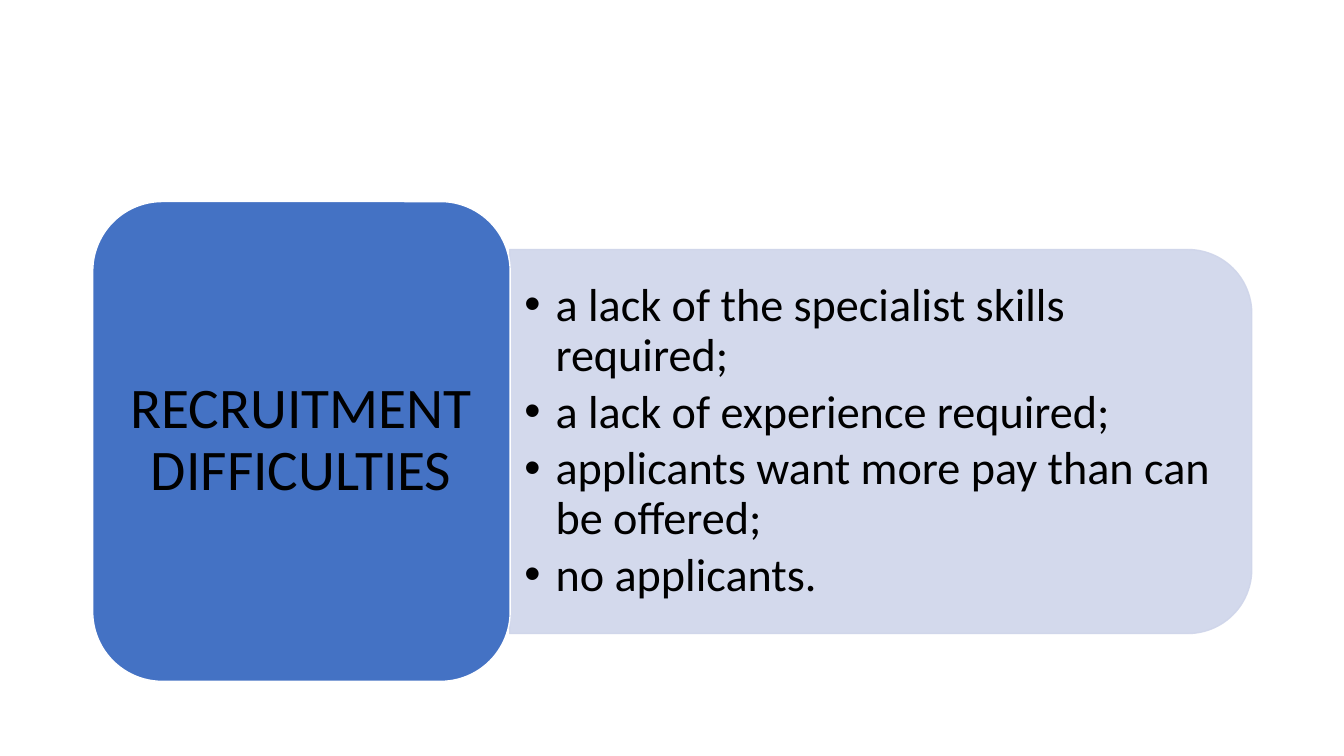
from dataclasses import dataclass
from typing import Any

from lxml import etree
from pptx import Presentation
from pptx.dml.color import RGBColor
from pptx.enum.shapes import MSO_SHAPE
from pptx.enum.text import MSO_ANCHOR, MSO_AUTO_SIZE, PP_ALIGN
from pptx.oxml.ns import qn
from pptx.util import Inches, Pt

ROUNDED = MSO_SHAPE.ROUNDED_RECTANGLE
ROUNDED_TOP = MSO_SHAPE.ROUND_2_SAME_RECTANGLE
MIDDLE = MSO_ANCHOR.MIDDLE
NO_AUTOFIT = MSO_AUTO_SIZE.NONE
LEFT, CENTER = PP_ALIGN.LEFT, PP_ALIGN.CENTER

COLORS = {"panel": "CFD5EA", "label": "4472C4", "edge": "FFFFFF", "text": "000000"}
BULLET_INDENT = Inches(0.31)


@dataclass
class Panel:
    preset: Any
    bounds: tuple[float, float, float, float]
    fill: str
    line: str
    rotation: int = 0
    opacity: int = 100


@dataclass
class TextBlock:
    bounds: tuple[float, float, float, float]
    margins: tuple[float, float]
    lines: list[str]
    size: int
    align: Any
    space_after: int = 0
    bullet: str = ""


DETAIL_PANEL = Panel(ROUNDED_TOP, (6.83, 0.7, 3.81, 7.36), "panel", "panel", 90, 90)
LABEL_PANEL = Panel(ROUNDED, (0.92, 2, 4.14, 4.76), "label", "edge")
LABEL = TextBlock((1.12, 2.2, 3.74, 4.35), (0.17, 0.09),
                  ["RECRUITMENT DIFFICULTIES"], 41, CENTER)
DETAILS = TextBlock(
    (5.06, 2.66, 7.17, 3.44), (0.14, 0.07),
    [
        "a lack of the specialist skills required;",
        "a lack of experience required;",
        "applicants want more pay than can be offered;",
        "no applicants.",
    ],
    33, LEFT, 5, "•",
)


def apply_format(target: Any, values: dict[str, Any]) -> None:
    for name, value in values.items():
        setattr(target, name, value)


def place(shape: Any, bounds: tuple[float, float, float, float]) -> None:
    sides = ("left", "top", "width", "height")
    apply_format(shape, dict(zip(sides, map(Inches, bounds))))


def draw_panel(page: Any, panel: Panel) -> None:
    shape = page.shapes.add_shape(panel.preset, *map(Inches, panel.bounds))
    shape.rotation = panel.rotation
    shape.shadow.inherit = False
    shape.fill.solid()
    shape.fill.fore_color.rgb = RGBColor.from_string(COLORS[panel.fill])
    shape.line.color.rgb = RGBColor.from_string(COLORS[panel.line])
    shape.line.width = Pt(1)
    if panel.opacity < 100:
        for color in shape.element.spPr.iter(qn("a:srgbClr")):
            etree.SubElement(color, qn("a:alpha"), val=str(panel.opacity * 1000))


def add_bullet(para: Any, symbol: str) -> None:
    properties = para._p.get_or_add_pPr()
    properties.set("marL", str(BULLET_INDENT))
    properties.set("indent", str(-BULLET_INDENT))
    etree.SubElement(properties, qn("a:buFont"), typeface="Arial")
    etree.SubElement(properties, qn("a:buChar"), char=symbol)


def write_text(box: Any, block: TextBlock) -> None:
    place(box, block.bounds)
    box.element.getparent().append(box.element)
    side, end = map(Inches, block.margins)
    frame = box.text_frame
    apply_format(frame, {
        "word_wrap": True, "auto_size": NO_AUTOFIT, "vertical_anchor": MIDDLE,
        "margin_left": side, "margin_right": side,
        "margin_top": end, "margin_bottom": end,
    })
    frame.text = "\n".join(block.lines)
    for para in frame.paragraphs:
        if block.bullet:
            add_bullet(para, block.bullet)
        apply_format(para, {
            "alignment": block.align, "line_spacing": 0.9,
            "space_before": Pt(0), "space_after": Pt(block.space_after),
        })
        for span in para.runs:
            apply_format(span.font, {"name": "Calibri", "size": Pt(block.size)})
            span.font.color.rgb = RGBColor.from_string(COLORS["text"])


def main() -> None:
    deck = Presentation()
    deck.slide_width, deck.slide_height = Inches(13.33), Inches(7.5)
    page = deck.slides.add_slide(deck.slide_layouts[1])
    title, body = page.placeholders
    draw_panel(page, DETAIL_PANEL)
    write_text(body, DETAILS)
    draw_panel(page, LABEL_PANEL)
    write_text(title, LABEL)
    deck.save("out.pptx")


if __name__ == "__main__":
    main()
